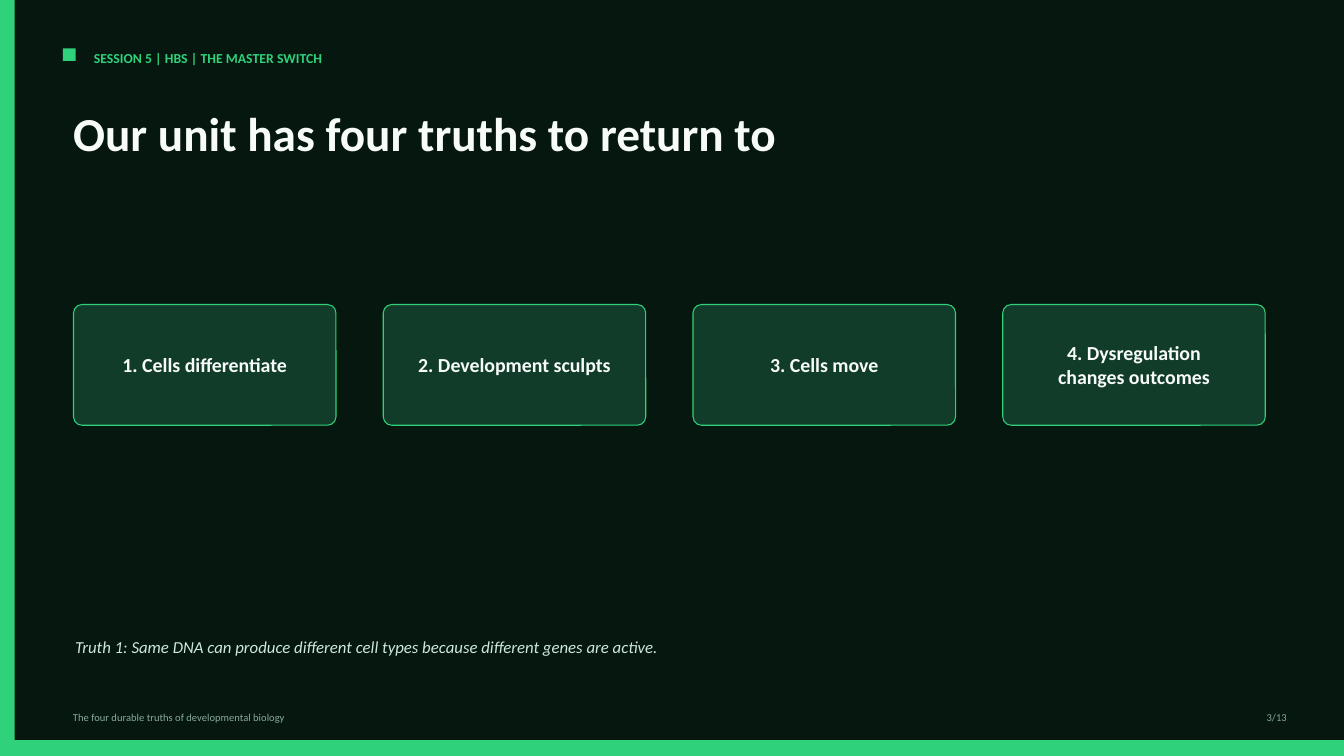
from pptx import Presentation
from pptx.dml.color import RGBColor
from pptx.enum.shapes import MSO_SHAPE
from pptx.enum.text import MSO_ANCHOR, MSO_AUTO_SIZE, PP_ALIGN
from pptx.util import Pt

PX = 9525
RECT, ROUND = MSO_SHAPE.RECTANGLE, MSO_SHAPE.ROUNDED_RECTANGLE
LEFT, CENTER, RIGHT = PP_ALIGN.LEFT, PP_ALIGN.CENTER, PP_ALIGN.RIGHT
TOP, MIDDLE = MSO_ANCHOR.TOP, MSO_ANCHOR.MIDDLE
NO_FIT = MSO_AUTO_SIZE.NONE
GREEN, WHITE, MUTED = "2FD27A", "F7FCF9", "87AB9A"


def rgb(value):
    return RGBColor.from_string(value)


def write(sp, text, size, color, bold=False, italic=False,
          align=LEFT, anchor=TOP, spacing=1.0):
    tf = sp.text_frame
    tf.word_wrap = True
    tf.auto_size = NO_FIT
    tf.vertical_anchor = anchor
    p = tf.paragraphs[0]
    p.alignment = align
    p.line_spacing = spacing
    r = p.add_run()
    r.text = text
    r.font.name = "Calibri"
    r.font.size = Pt(size)
    r.font.bold = bold
    r.font.italic = italic
    r.font.color.rgb = rgb(color)


prs = Presentation()
prs.slide_width, prs.slide_height = 1280 * PX, 720 * PX
s = prs.slides.add_slide(prs.slide_layouts[5])
s.background.fill.solid()
s.background.fill.fore_color.rgb = rgb("06170F")

title = s.shapes.title
title.left, title.top, title.width, title.height = [
    v * PX for v in (60, 100, 1100, 84)]
write(title, "Our unit has four truths to return to", 33.8, WHITE,
      bold=True, spacing=0.92)

for box in [(0, 0, 14, 720), (0, 705, 1280, 15), (60, 46, 12, 12)]:
    sp = s.shapes.add_shape(RECT, *[v * PX for v in box])
    sp.shadow.inherit = False
    sp.fill.solid()
    sp.fill.fore_color.rgb = rgb(GREEN)
    sp.line.fill.background()

labels = [
    ((80, 43, 620, 24), "SESSION 5 | HBS | THE MASTER SWITCH", 9.8, GREEN,
     {"bold": True}),
    ((60, 672, 900, 18), "The four durable truths of developmental biology",
     7.5, MUTED, {}),
    ((1155, 672, 80, 18), "3/13", 7.5, MUTED, {"align": RIGHT}),
    ((62, 600, 1080, 44),
     "Truth 1: Same DNA can produce different cell types because "
     "different genes are active.",
     12, "CDE9DA", {"italic": True, "spacing": 1.1}),
]
for box, text, size, color, style in labels:
    sp = s.shapes.add_textbox(*[v * PX for v in box])
    write(sp, text, size, color, **style)

truths = ["1. Cells differentiate", "2. Development sculpts",
          "3. Cells move", "4. Dysregulation changes outcomes"]
for i, truth in enumerate(truths):
    x = 70 + 295 * i
    card = s.shapes.add_shape(ROUND, x * PX, 290 * PX, 250 * PX, 115 * PX)
    card.shadow.inherit = False
    card.adjustments[0] = 0.07
    card.fill.solid()
    card.fill.fore_color.rgb = rgb("123C2A")
    card.line.color.rgb = rgb(GREEN)
    card.line.width = Pt(0.75)
    sp = s.shapes.add_textbox((x + 22) * PX, 310 * PX, 206 * PX, 75 * PX)
    write(sp, truth, 14.2, WHITE, bold=True, align=CENTER, anchor=MIDDLE)

prs.save("out.pptx")
